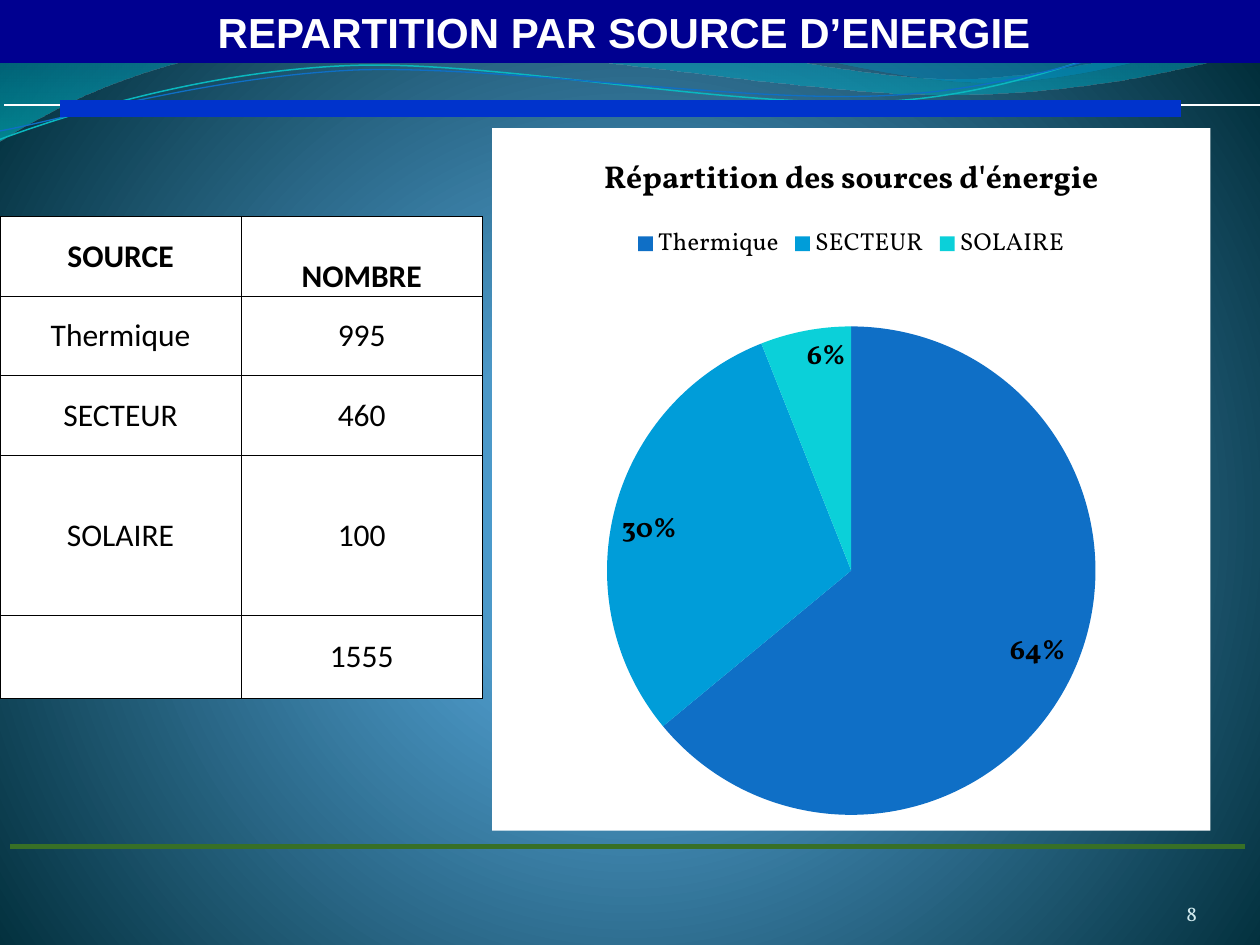
from lxml.etree import SubElement
from pptx import Presentation
from pptx.chart.data import CategoryChartData
from pptx.dml.color import RGBColor
from pptx.enum.chart import XL_CHART_TYPE, XL_LABEL_POSITION as LabelPosition, XL_LEGEND_POSITION as LegendPosition
from pptx.enum.shapes import MSO_CONNECTOR
from pptx.enum.text import MSO_ANCHOR as Anchor, PP_ALIGN as Align
from pptx.oxml import parse_xml
from pptx.oxml.ns import nsdecls, qn
from pptx.util import Pt

color = RGBColor.from_string


def set_gradient(properties, stops, direction):
    """Replace the solid fill by a gradient; stops are (position, colour, opacity) in percent."""
    stops_xml = "".join(
        f'<a:gs pos="{position * 1000}"><a:srgbClr val="{value}"><a:alpha val="{opacity * 1000}"/></a:srgbClr></a:gs>'
        for position, value, opacity in stops)
    gradient = parse_xml(f'<a:gradFill {nsdecls("a")} rotWithShape="1"><a:gsLst>{stops_xml}</a:gsLst>{direction}</a:gradFill>')
    properties.replace(properties.find(qn("a:solidFill")), gradient)


def add_wave(slide, start, segments, close):
    """Draw a freeform; two numbers make a straight segment, six a Bezier curve."""
    points = [(Pt(x), Pt(y)) for segment in segments for x, y in zip(segment[::2], segment[1::2])]
    builder = slide.shapes.build_freeform(Pt(start[0]), Pt(start[1]))
    builder.add_line_segments(points, close=close)
    shape = builder.convert_to_shape()
    shape.shadow.inherit = False
    # Join the three points of each curve into one Bezier element
    lines = iter(shape.element.findall(".//" + qn("a:lnTo")))
    for segment in segments:
        first = next(lines)
        if len(segment) == 6:
            first.tag = qn("a:cubicBezTo")
            for line in (next(lines), next(lines)):
                first.append(line[0])
                line.getparent().remove(line)
    return shape


presentation = Presentation()
presentation.slide_width, presentation.slide_height = Pt(720), Pt(540)
slide = presentation.slides.add_slide(presentation.slide_layouts[5])

# Background
slide.background.fill.solid()
set_gradient(slide.element.find(".//" + qn("p:bgPr")),
             [(0, "4AA0D6", 100), (25, "4C98C7", 100), (100, "002C38", 100)],
             '<a:path path="circle"><a:fillToRect l="10000" t="110000" r="10000" b="100000"/></a:path>')

# Filled waves
filled_waves = [
    ((0, 0), [(317, -1), (343, 12, 478, 45, 546, 45), (614, 45, 690, 19, 720, 6), (721, 26),
              (708, 32, 626, 55, 537, 54), (448, 54, 275, 20, 185, 24.5), (93, 26, 33, 60, -1, 81)],
     [(0, "0074A1", 45), (100, "00C6CF", 55)]),
    ((345, -1), [(366, 8, 491, 45, 554, 47), (616, 50, 692, 23, 720, 15), (720, 0)],
     [(0, "00A1A9", 30), (80, "008BBF", 45)]),
]
for start, segments, stops in filled_waves:
    wave = add_wave(slide, start, segments, True)
    wave.line.fill.background()
    wave.fill.solid()
    set_gradient(wave.element.spPr, stops, '<a:lin ang="5400000" scaled="1"/>')

# Thin wave lines
thin_waves = [
    ((-1, 80), [(34, 67, 113, 41, 199, 37.5), (284, 34, 427, 64, 513, 57.5), (600, 51, 675, 11, 719, -1)],
     "0AB8BF", 0.85),
    ((-1, 75), [(33, 69, 117, 44, 203, 40), (290, 37, 430, 60.5, 516, 54), (602, 48, 678, 15, 720, 4)],
     "0F6FC6", 0.75),
]
for start, segments, value, width in thin_waves:
    wave = add_wave(slide, start, segments, False)
    wave.fill.background()
    wave.line.color.rgb = color(value)
    wave.line.width = Pt(width)

# Horizontal rules
for left, right, y, value, width in [(2.5, 720, 60.2, "FFFFFF", 1), (5.8, 711.4, 483.8, "387026", 3),
                                     (34.4, 675, 61.9, "0033CC", 10)]:
    rule = slide.shapes.add_connector(MSO_CONNECTOR.STRAIGHT, Pt(left), Pt(y), Pt(right), Pt(y))
    rule.line.color.rgb = color(value)
    rule.line.width = Pt(width)
    SubElement(rule.element.spPr, qn("a:effectLst"))

# Title band, in front of the waves
title = slide.shapes.title
title.element.getparent().append(title.element)
title.left, title.top, title.width, title.height = Pt(0), Pt(0), Pt(720), Pt(36)
title.fill.solid()
title.fill.fore_color.rgb = color("000090")
title.text_frame.vertical_anchor = Anchor.MIDDLE
paragraph = title.text_frame.paragraphs[0]
paragraph.alignment = Align.CENTER
run = paragraph.add_run()
run.text = "REPARTITION PAR SOURCE D’ENERGIE "
run.font.name, run.font.size, run.font.bold = "Arial", Pt(24), True
run.font.color.rgb = color("FFFFFF")

# Slide number
number_box = slide.shapes.add_textbox(Pt(624), Pt(500.5), Pt(60), Pt(28.5))
frame = number_box.text_frame
frame.word_wrap = True
frame.margin_left = frame.margin_top = frame.margin_right = frame.margin_bottom = 0
frame.vertical_anchor = Anchor.BOTTOM
paragraph = frame.paragraphs[0]
paragraph.alignment = Align.RIGHT
run = paragraph.add_run()
run.text = "8"
run.font.name, run.font.size = "Vollkorn", Pt(12)
run.font.color.rgb = color("D1EAEE")

# Pie chart
chart_data = CategoryChartData()
chart_data.categories = ["Thermique", "SECTEUR", "SOLAIRE"]
chart_data.add_series("Series 1", (64, 30, 6))
chart = slide.shapes.add_chart(XL_CHART_TYPE.PIE, Pt(281.2), Pt(73.2), Pt(410.5), Pt(401.5), chart_data).chart
chart.font.name, chart.font.size = "Vollkorn", Pt(10)
chart.font.color.rgb = color("000000")
chart.has_title = True
run = chart.chart_title.text_frame.paragraphs[0].add_run()
run.text = "Répartition des sources d'énergie"
run.font.name, run.font.size, run.font.bold = "Vollkorn", Pt(18), True
run.font.color.rgb = color("000000")
chart.has_legend = True
chart.legend.position = LegendPosition.TOP
chart.legend.include_in_layout = False
chart.legend.font.size = Pt(14)

plot = chart.plots[0]
plot.vary_by_categories = True
for index, value in enumerate(["0F6FC6", "009DD9", "0BD0D9"]):
    point = plot.series[0].points[index]
    point.format.fill.solid()
    point.format.fill.fore_color.rgb = color(value)
    point.format.line.fill.background()
plot.has_data_labels = True
labels = plot.data_labels
labels.show_percentage, labels.show_value = True, False
labels.number_format, labels.number_format_is_linked = "0%", False
labels.position = LabelPosition.INSIDE_END
labels.font.size, labels.font.bold = Pt(16), True

# White chart area and plot position
chart.element.find(qn("c:txPr")).addprevious(parse_xml(
    f'<c:spPr {nsdecls("c", "a")}><a:solidFill><a:srgbClr val="FFFFFF"/></a:solidFill><a:ln><a:noFill/></a:ln></c:spPr>'))
plot_area = chart.element.find(".//" + qn("c:plotArea"))
for layout in plot_area.findall(qn("c:layout")):
    plot_area.remove(layout)
layout = parse_xml(f'<c:layout {nsdecls("c")}><c:manualLayout><c:layoutTarget val="inner"/>'
                   '<c:xMode val="edge"/><c:yMode val="edge"/><c:x val="0.16"/><c:y val="0.28"/>'
                   '<c:w val="0.68"/><c:h val="0.7"/></c:manualLayout></c:layout>')
plot_area.insert(0, layout)

# Source table
rows = [("SOURCE", "NOMBRE"), ("Thermique", "995"), ("SECTEUR", "460"), ("SOLAIRE", "100"), ("", "1555")]
row_heights = [45.5, 45.5, 45.5, 91.2, 47.5]
table = slide.shapes.add_table(len(rows), 2, Pt(0), Pt(123.8), Pt(275.6), Pt(sum(row_heights))).table
table.first_row = table.horz_banding = False
for column in table.columns:
    column.width = Pt(137.8)
for row_index, texts in enumerate(rows):
    table.rows[row_index].height = Pt(row_heights[row_index])
    for column_index, text in enumerate(texts):
        cell = table.cell(row_index, column_index)
        cell.margin_left = cell.margin_top = cell.margin_right = cell.margin_bottom = 0
        cell.vertical_anchor = Anchor.BOTTOM if text == "NOMBRE" else Anchor.MIDDLE
        cell.fill.solid()
        cell.fill.fore_color.rgb = color("FFFFFF")
        for position, side in enumerate("LRTB"):
            cell._tc.tcPr.insert(position, parse_xml(
                f'<a:ln{side} {nsdecls("a")} w="{Pt(0.5)}"><a:solidFill>'
                f'<a:srgbClr val="000000"/></a:solidFill></a:ln{side}>'))
        if text:
            paragraph = cell.text_frame.paragraphs[0]
            paragraph.alignment = Align.CENTER
            run = paragraph.add_run()
            run.text = text
            run.font.name, run.font.size, run.font.bold = "Calibri", Pt(18), row_index == 0
            run.font.color.rgb = color("000000")

presentation.save("out.pptx")
